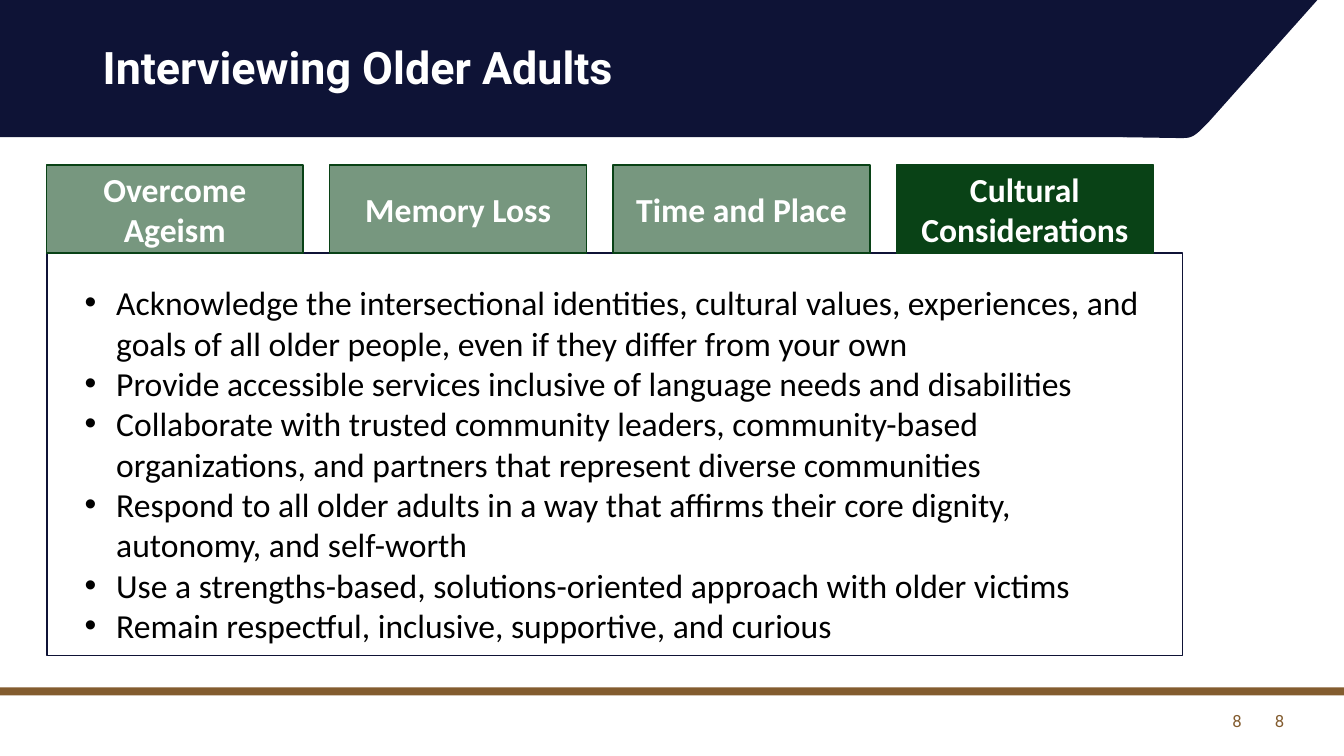
import pptx
import pptx.dml.color
import pptx.enum.shapes
import pptx.enum.text
import pptx.oxml
import pptx.oxml.ns
import pptx.util

Pt = pptx.util.Pt
Color = pptx.dml.color.RGBColor
Align = pptx.enum.text.PP_ALIGN
Anchor = pptx.enum.text.MSO_ANCHOR
Fit = pptx.enum.text.MSO_AUTO_SIZE

NAVY = Color(0x0E, 0x13, 0x36)
BROWN = Color(0x83, 0x5C, 0x2F)
GREEN = Color(0x09, 0x42, 0x16)
EDGE = Color(0x0F, 0x13, 0x36)
WHITE = Color(0xFF, 0xFF, 0xFF)
BLACK = Color(0x00, 0x00, 0x00)

TABS = ["Overcome Ageism", "Memory Loss", "Time and Place", "Cultural Considerations"]
POINTS = [
    "Acknowledge the intersectional identities, cultural values, experiences, and "
    "goals of all older people, even if they differ from your own",
    "Provide accessible services inclusive of language needs and disabilities",
    "Collaborate with trusted community leaders, community-based organizations, "
    "and partners that represent diverse communities",
    "Respond to all older adults in a way that affirms their core dignity, "
    "autonomy, and self-worth",
    "Use a strengths-based, solutions-oriented approach with older victims",
    "Remain respectful, inclusive, supportive, and curious",
]


def paint(shape, fill, line=None):
    shape.shadow.inherit = False
    shape.fill.solid()
    shape.fill.fore_color.rgb = fill
    if line is None:
        shape.line.fill.background()
    else:
        shape.line.color.rgb = line
        shape.line.width = Pt(1)


def place(shape, left, top, width, height):
    shape.left, shape.top = Pt(left), Pt(top)
    shape.width, shape.height = Pt(width), Pt(height)


def style(par, face, size, color, bold=False, align=Align.LEFT):
    par.alignment = align
    for run in par.runs:
        run.font.name = face
        run.font.size = Pt(size)
        run.font.bold = bold
        run.font.color.rgb = color


def add_box(slide, left, top, width, height, fill, line=None):
    box = slide.shapes.add_shape(
        pptx.enum.shapes.MSO_SHAPE.RECTANGLE, Pt(left), Pt(top), Pt(width), Pt(height))
    paint(box, fill, line)
    return box


def curve(a, b, c, d, steps=12):
    for step in range(steps + 1):
        t = step / steps
        u = 1 - t
        yield tuple(u**3 * p + 3 * u * u * t * q + 3 * u * t * t * r + t**3 * s
                    for p, q, r, s in zip(a, b, c, d))


def add_banner(slide):
    add_box(slide, 0, 0, 804, 98, NAVY)
    bend = curve((841, 98.6), (851, 98.6), (851.8, 99.4), (864, 86.4))
    dots = [(Pt(x), Pt(y)) for x, y in [*bend, (941, 0), (802, 0)]]
    pen = slide.shapes.build_freeform(Pt(802), Pt(98))
    pen.add_line_segments(dots, close=True)
    paint(pen.convert_to_shape(), NAVY)


def add_tab(slide, left, label, faded):
    tab = add_box(slide, left, 118, 183.5, 62.7, GREEN, GREEN)
    if faded:
        tint = tab.fill._xPr.find(".//" + pptx.oxml.ns.qn("a:srgbClr"))
        tint.append(pptx.oxml.parse_xml(
            f'<a:alpha {pptx.oxml.ns.nsdecls("a")} val="55000"/>'))
    frame = tab.text_frame
    frame.word_wrap = True
    frame.vertical_anchor = Anchor.MIDDLE
    frame.text = label
    style(frame.paragraphs[0], "Calibri", 24, WHITE, True, Align.CENTER)


def add_page(slide, left):
    box = slide.shapes.add_textbox(Pt(left), Pt(500.5), Pt(216), Pt(28.8))
    frame = box.text_frame
    frame.word_wrap = True
    frame.vertical_anchor = Anchor.MIDDLE
    frame.text = "8"
    style(frame.paragraphs[0], "Roboto", 12, BROWN, align=Align.RIGHT)


def set_title(title):
    place(title, 66.2, 28.8, 828, 104.4)
    frame = title.text_frame
    frame.text = "Interviewing Older Adults"
    frame.auto_size = Fit.NONE
    frame.vertical_anchor = Anchor.TOP
    frame.paragraphs[0].line_spacing = 0.9
    style(frame.paragraphs[0], "Roboto", 32, WHITE, True)


def set_list(body):
    place(body, 53.3, 198, 778.3, 272)
    frame = body.text_frame
    frame.text = "\n".join(POINTS)
    frame.auto_size = Fit.NONE
    for par in frame.paragraphs:
        props = par._p.get_or_add_pPr()
        props.set("marL", str(Pt(22.5)))
        props.set("indent", str(Pt(-22.5)))
        for tag in ('buFont typeface="Arial"', 'buChar char="•"'):
            name, rest = tag.split(" ")
            props.append(pptx.oxml.parse_xml(
                f'<a:{name} {pptx.oxml.ns.nsdecls("a")} {rest}/>'))
        par.space_before = Pt(0)
        style(par, "Calibri", 24, BLACK)


def main():
    deck = pptx.Presentation()
    deck.slide_width, deck.slide_height = Pt(960), Pt(540)
    slide = deck.slides.add_slide(deck.slide_layouts[1])
    title, body = slide.placeholders
    add_banner(slide)
    add_box(slide, 0, 491, 960, 5.8, BROWN)
    add_box(slide, 33.6, 180.8, 811, 287.3, WHITE, EDGE)
    for i, label in enumerate(TABS):
        add_tab(slide, 33.1 + 202.4 * i, label, i < 3)
    for left in (678.2, 708.5):
        add_page(slide, left)
    set_title(title)
    set_list(body)
    for holder in (title, body):
        holder.element.getparent().append(holder.element)
    deck.save("out.pptx")


if __name__ == "__main__":
    main()
